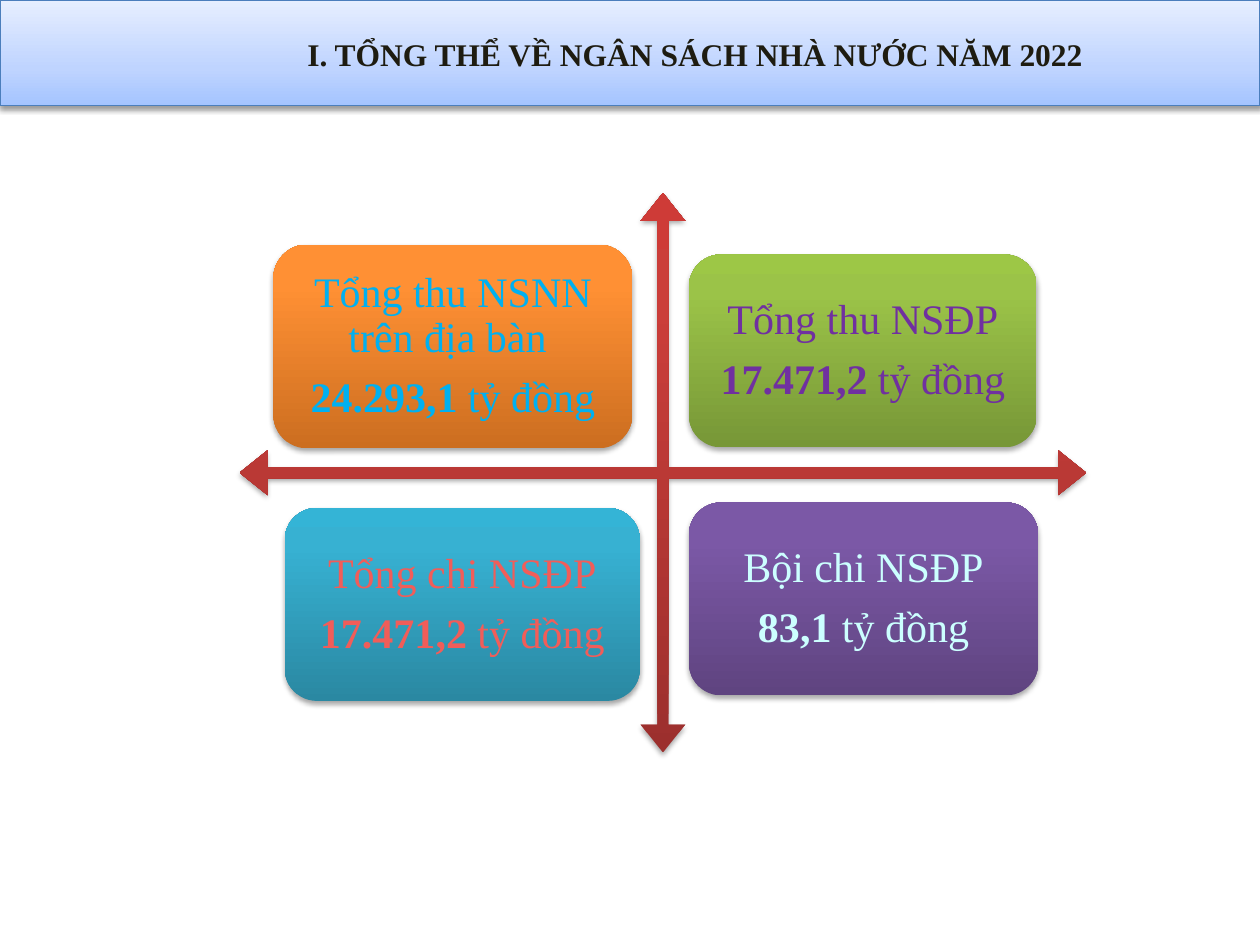
"""Build the 2022 state budget overview slide."""
from dataclasses import dataclass

from lxml.etree import SubElement
from pptx import Presentation
from pptx.dml.color import RGBColor
from pptx.enum.shapes import MSO_SHAPE as Shape
from pptx.enum.text import MSO_ANCHOR as Anchor, PP_ALIGN as Align
from pptx.oxml.ns import qn
from pptx.util import Cm, Pt


@dataclass(frozen=True)
class Theme:
    font: str = "Times New Roman"
    title_size: int = 18
    body_size: int = 24
    title: str = "1E1C11"
    banner: tuple = ((0, "A4C4FF"), (35, "BFD4FF"), (100, "E6EEFF"))
    banner_line: str = "4B7EBC"
    arrow: tuple = ((0, "9C2F2D"), (80, "CB3E3A"), (100, "CE3B37"))
    orange: tuple = ((0, "CC6E20"), (80, "FF9034"), (100, "FF9136"))
    green: tuple = ((0, "779737"), (80, "9BC348"), (100, "9DC746"))
    teal: tuple = ((0, "2A88A2"), (80, "37B1D2"), (100, "34B4D6"))
    purple: tuple = ((0, "5F4480"), (80, "7B58A6"), (100, "7C57A8"))
    on_orange: str = "00B0F0"
    on_green: str = "7030A0"
    on_teal: str = "F15D59"
    on_purple: str = "CCFFFF"


theme = Theme()


def add_raised_shape(kind, place, stops, shade):
    shape = page.shapes.add_shape(kind, *map(Cm, place))
    shape.line.fill.background()
    shape.fill.gradient()
    shape.fill.gradient_angle = 90
    stop_list = shape._element.spPr.find(f".//{qn('a:gsLst')}")
    stop_list.clear()
    for position, color in stops:
        stop = SubElement(stop_list, qn("a:gs"), pos=str(position * 1000))
        SubElement(stop, qn("a:srgbClr"), val=color)
    shape.shadow.inherit = False
    effects = shape._element.spPr.find(qn("a:effectLst"))
    shadow = SubElement(effects, qn("a:outerShdw"), blurRad=str(Pt(3.1)),
                        dist=str(Pt(1.8)), dir="5400000", rotWithShape="0")
    black = SubElement(shadow, qn("a:srgbClr"), val="000000")
    SubElement(black, qn("a:alpha"), val=str(shade * 1000))
    return shape


def style_paragraph(para, size, color):
    para.alignment = Align.CENTER
    para.font.name = theme.font
    para.font.size = Pt(size)
    para.font.color.rgb = RGBColor.from_string(color)


deck = Presentation()
deck.slide_width, deck.slide_height = Cm(25.4), Cm(19.05)
page = deck.slides.add_slide(deck.slide_layouts[6])

banner = add_raised_shape(Shape.RECTANGLE, (0, 0, 25.4, 2.13), theme.banner, 38)
banner.line.color.rgb = RGBColor.from_string(theme.banner_line)
banner.line.width = Pt(0.75)

title = page.shapes.add_textbox(Cm(4.34), Cm(0.7), Cm(19.35), Cm(1.27)).text_frame
title.word_wrap = True
title.margin_left = title.margin_right = title.margin_top = title.margin_bottom = 0
title.text = "I. TỔNG THỂ VỀ NGÂN SÁCH NHÀ NƯỚC NĂM 2022"
style_paragraph(title.paragraphs[0], theme.title_size, theme.title)
title.paragraphs[0].font.bold = True

axes = add_raised_shape(Shape.QUAD_ARROW, (4.83, 3.89, 17.07, 11.28), theme.arrow, 35)
for index, ratio in enumerate((0.02, 0.04, 0.05)):
    axes.adjustments[index] = ratio

quadrants = (
    ((5.51, 4.93, 7.24, 4.11), theme.orange, theme.on_orange,
     "Tổng thu NSNN trên địa bàn ", "24.293,1"),
    ((13.89, 5.13, 7.01, 3.89), theme.green, theme.on_green,
     "Tổng thu NSĐP", "17.471,2"),
    ((5.74, 10.24, 7.16, 3.89), theme.teal, theme.on_teal,
     "Tổng chi NSĐP", "17.471,2"),
    ((13.89, 10.13, 7.04, 3.89), theme.purple, theme.on_purple,
     "Bội chi NSĐP", "83,1"),
)
for place, stops, color, label, amount in quadrants:
    box = add_raised_shape(Shape.ROUNDED_RECTANGLE, place, stops, 35)
    frame = box.text_frame
    frame.word_wrap = True
    frame.vertical_anchor = Anchor.MIDDLE
    frame.margin_left = frame.margin_right = Cm(0.25)
    frame.margin_top = frame.margin_bottom = Cm(0.25)
    for spans in (((label, False),), ((amount, True), (" tỷ đồng", False))):
        para = frame.paragraphs[0] if spans[0][0] == label else frame.add_paragraph()
        style_paragraph(para, theme.body_size, color)
        para.line_spacing = 0.9
        para.space_after = Pt(8.4)
        for text, bold in spans:
            span = para.add_run()
            span.text = text
            span.font.bold = bold

deck.save("out.pptx")
